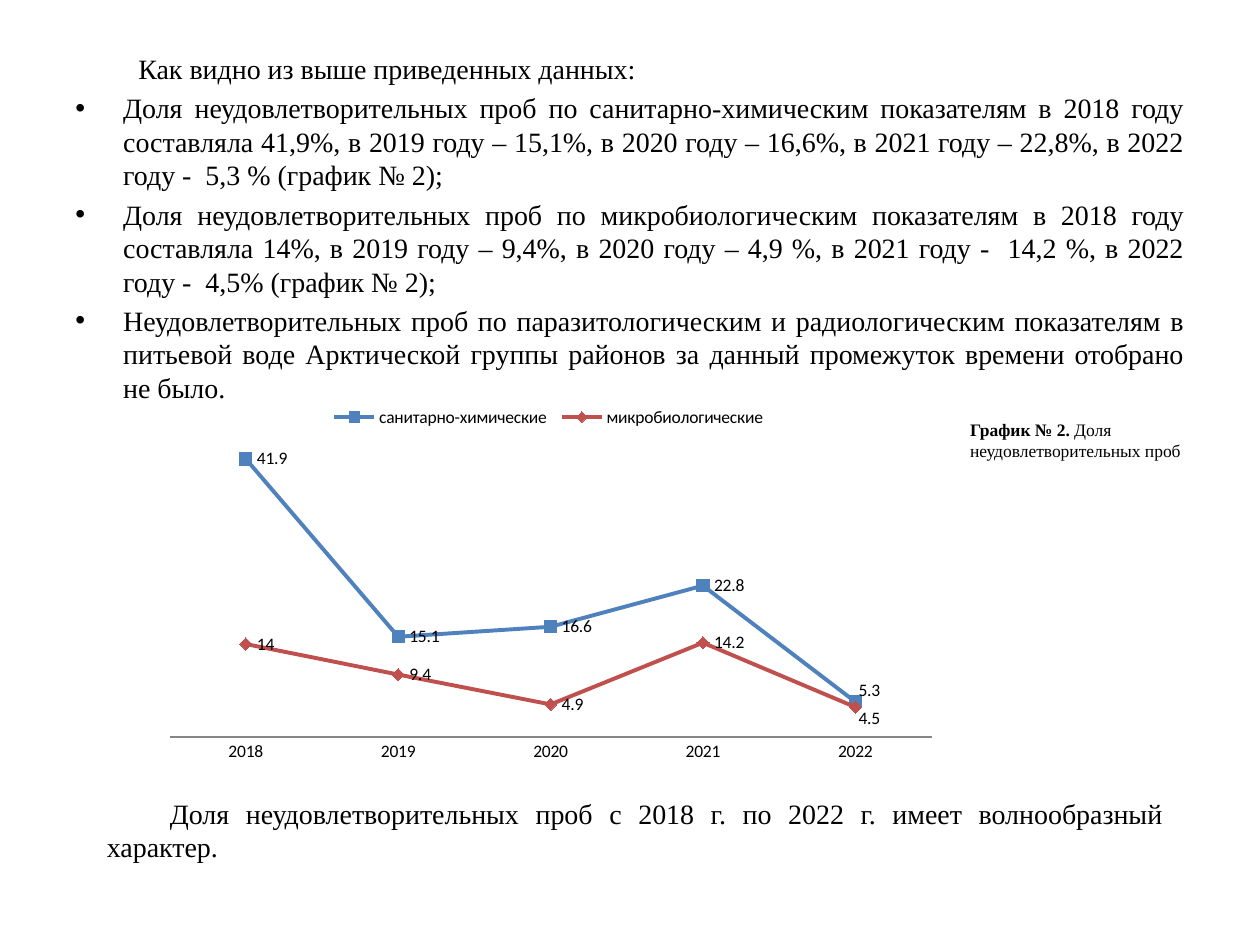
import pptx
import pptx.chart.data
import pptx.dml.color
import pptx.enum.chart
import pptx.enum.text
import pptx.oxml
import pptx.oxml.ns
import pptx.util
from pptx.util import Inches

SERIF = "Times New Roman"
BLACK = "000000"
YEARS = ["2018", "2019", "2020", "2021", "2022"]
SERIES = [
    ("санитарно-химические ", [41.9, 15.1, 16.6, 22.8, 5.3], "4F81BD", "SQUARE", -0.03),
    ("микробиологические ", [14, 9.4, 4.9, 14.2, 4.5], "C0504D", "DIAMOND", 0.03),
]
INTRO = "\tКак видно из выше приведенных данных:"
FINDINGS = [
    "Доля неудовлетворительных проб по санитарно-химическим показателям в 2018 году составляла 41,9%, "
    "в 2019 году – 15,1%, в 2020 году – 16,6%, в 2021 году – 22,8%, в 2022 году -  5,3 % (график № 2);",
    "Доля неудовлетворительных проб по микробиологическим показателям в 2018 году составляла 14%, "
    "в 2019 году – 9,4%, в 2020 году – 4,9 %, в 2021 году -  14,2 %, в 2022 году -  4,5% (график № 2);",
    "Неудовлетворительных проб по паразитологическим и радиологическим показателям в питьевой воде "
    "Арктической группы районов за данный промежуток времени отобрано не было. ",
]
CAPTION = [("График № 2. ", True), ("Доля неудовлетворительных проб", False)]
CONCLUSION = "\tДоля неудовлетворительных проб с 2018 г. по 2022 г. имеет волнообразный характер. "


def color(value):
    return pptx.dml.color.RGBColor.from_string(value)


def add_text_frame(page, box):
    frame = page.shapes.add_textbox(*box).text_frame
    frame.word_wrap = True
    return frame


def add_span(para, text, size, bold=False):
    span = para.add_run()
    span.text = text
    span.font.name = SERIF
    span.font.size = pptx.util.Pt(size)
    span.font.bold = bold
    span.font.color.rgb = color(BLACK)


def add_bullet(para):
    props = para._p.get_or_add_pPr()
    props.set("marL", str(Inches(0.38)))
    props.set("indent", str(-Inches(0.38)))
    for tag, name, value in (("a:buFont", "typeface", "Arial"), ("a:buChar", "char", "•")):
        mark = pptx.oxml.parse_xml(f'<{tag} {pptx.oxml.ns.nsdecls("a")} {name}="{value}"/>')
        props.append(mark)


def add_findings(page, box):
    frame = add_text_frame(page, box)
    for index, text in enumerate([INTRO] + FINDINGS):
        para = frame.add_paragraph() if index else frame.paragraphs[0]
        para.alignment = pptx.enum.text.PP_ALIGN.JUSTIFY
        para.space_before = pptx.util.Pt(3.2)
        if index:
            add_bullet(para)
        add_span(para, text, 16)


def add_caption(page, box):
    para = add_text_frame(page, box).paragraphs[0]
    for text, bold in CAPTION:
        add_span(para, text, 10, bold)


def add_conclusion(page, box):
    para = add_text_frame(page, box).paragraphs[0]
    para.alignment = pptx.enum.text.PP_ALIGN.JUSTIFY
    add_span(para, CONCLUSION, 16)


def layout_xml(**values):
    parts = "".join(f'<c:{name} val="{value}"/>' for name, value in values.items())
    return pptx.oxml.parse_xml(
        f'<c:layout {pptx.oxml.ns.nsdecls("c")}><c:manualLayout>{parts}</c:manualLayout></c:layout>'
    )


def style_series(series, hue, marker, shift):
    right = pptx.enum.chart.XL_LABEL_POSITION.RIGHT
    series.smooth = False
    series.format.line.color.rgb = color(hue)
    series.format.line.width = pptx.util.Pt(2.25)
    series.marker.style = pptx.enum.chart.XL_MARKER_STYLE[marker]
    series.marker.size = 7
    series.marker.format.fill.solid()
    series.marker.format.fill.fore_color.rgb = color(hue)
    series.marker.format.line.color.rgb = color(hue)
    series.data_labels.show_value = True
    series.data_labels.position = right
    series.points[len(YEARS) - 1].data_label.position = right
    label = series._element.xpath("c:dLbls/c:dLbl")[0]
    label.insert(1, layout_xml(x=-0.01, y=shift))


def add_trend_chart(page, box):
    data = pptx.chart.data.CategoryChartData()
    data.categories = YEARS
    for name, values, *_ in SERIES:
        data.add_series(name, values)
    kind = pptx.enum.chart.XL_CHART_TYPE.LINE_MARKERS
    chart = page.shapes.add_chart(kind, *box, data).chart
    chart.has_title = False
    chart.font.name = "Calibri"
    chart.font.size = pptx.util.Pt(10)
    chart.font.color.rgb = color(BLACK)
    chart.has_legend = True
    chart.legend.position = pptx.enum.chart.XL_LEGEND_POSITION.TOP
    chart.legend.include_in_layout = False
    chart.value_axis.visible = False
    chart.value_axis.has_major_gridlines = False
    chart.value_axis.minimum_scale = 0
    chart.value_axis.maximum_scale = 45
    chart.category_axis.major_tick_mark = pptx.enum.chart.XL_TICK_MARK.NONE
    chart.category_axis.format.line.color.rgb = color("868686")
    plot = chart.plots[0]
    plot.vary_by_categories = False
    for series, (_, _, hue, marker, shift) in zip(plot.series, SERIES):
        style_series(series, hue, marker, shift)
    area = chart._chartSpace.xpath("c:chart/c:plotArea")[0]
    for old in area.xpath("c:layout"):
        area.remove(old)
    area.insert(0, layout_xml(layoutTarget="inner", xMode="edge", yMode="edge", x=0.02, y=0.12, w=0.96, h=0.79))


def main():
    deck = pptx.Presentation()
    deck.slide_width = Inches(10)
    deck.slide_height = Inches(7.5)
    page = deck.slides.add_slide(deck.slide_layouts[6])
    add_findings(page, (Inches(0.5), Inches(0.36), Inches(9), Inches(6.34)))
    add_caption(page, (Inches(7.6), Inches(3.28), Inches(2.01), Inches(0.44)))
    add_conclusion(page, (Inches(0.75), Inches(6.27), Inches(8.58), Inches(0.64)))
    add_trend_chart(page, (Inches(1.22), Inches(3.12), Inches(6.3), Inches(3)))
    deck.save("out.pptx")


if __name__ == "__main__":
    main()
